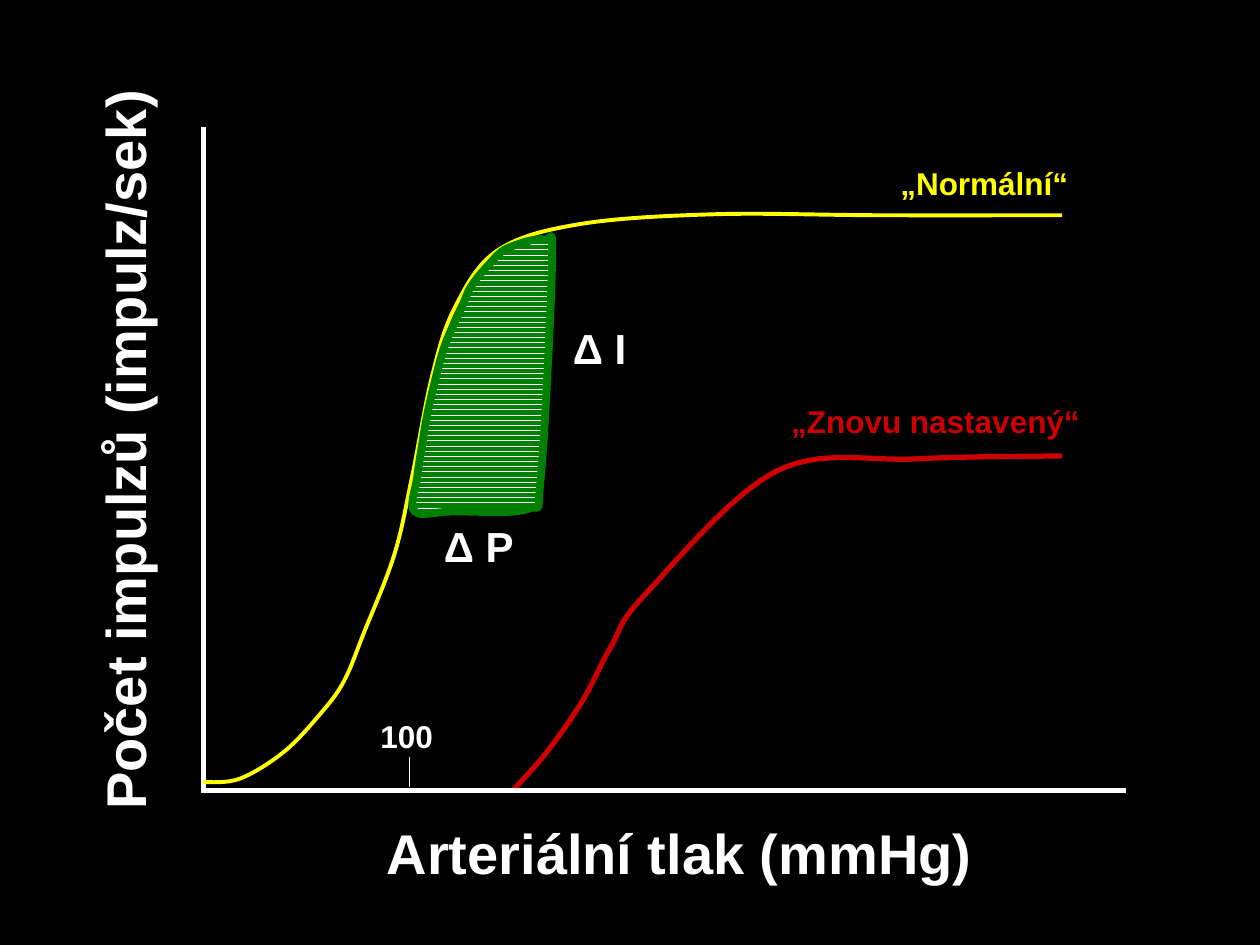
from pptx import Presentation
from pptx.dml.color import RGBColor
from pptx.enum.dml import MSO_PATTERN
from pptx.enum.shapes import MSO_CONNECTOR
from pptx.enum.text import MSO_AUTO_SIZE, PP_ALIGN
from pptx.oxml.ns import qn
from pptx.oxml.xmlchemy import OxmlElement
from pptx.util import Cm, Pt

BLACK, WHITE, YELLOW, RED, GREEN = "000000", "FFFFFF", "FFFF00", "CC0000", "008000"
AXIS_SIZE, DELTA_SIZE, LABEL_SIZE = 32, 24, 18
LABEL_HEIGHT, DELTA_WIDTH, DELTA_HEIGHT = 1.02, 2.4, 1.27
AXIS_X, AXIS_Y = 4.1, 15.93
AXIS_TOP, AXIS_BOTTOM, AXIS_RIGHT = 2.57, 15.98, 22.7
TICK_X, TICK_TOP, TICK_BOTTOM = 8.25, 15.26, 15.86
UNITS_PER_CM = 1000

NORMAL_KNOTS = [
    (4.09, 15.77), (4.83, 15.7), (5.72, 15.16), (6.45, 14.4), (6.93, 13.74),
    (7.34, 12.75), (7.95, 11.18), (8.31, 9.6), (8.71, 7.59), (9.17, 6.2),
    (10.03, 5.05), (11.68, 4.52), (14.4, 4.32), (17.73, 4.34), (21.41, 4.34),
]
RESET_KNOTS = [
    (10.34, 15.93), (11, 15.19), (11.73, 14.15), (12.32, 13.03),
    (13, 11.99), (15.65, 9.5), (18.47, 9.25), (21.41, 9.19),
]
DELTA_KNOTS = [
    (10.97, 4.83), (10.24, 5), (9.86, 5.33), (9.5, 5.77), (9.32, 6.17),
    (8.97, 6.96), (8.76, 7.72), (8.61, 8.38), (8.51, 8.97), (8.41, 9.63),
    (8.36, 10.31), (9.14, 10.31), (10.64, 10.26), (10.9, 9.65), (11.13, 5.26),
]


def color(value):
    """Turn a hex string into a colour."""
    return RGBColor.from_string(value)


def add_text(slide, text, left, top, width, height, *, size, fill=WHITE,
             align=PP_ALIGN.LEFT, rotation=0):
    """Add a bold one-line label."""
    shape = slide.shapes.add_textbox(Cm(left), Cm(top), Cm(width), Cm(height))
    shape.rotation = rotation
    frame = shape.text_frame
    frame.word_wrap = True
    frame.auto_size = MSO_AUTO_SIZE.SHAPE_TO_FIT_TEXT
    paragraph = frame.paragraphs[0]
    paragraph.alignment = align
    run = paragraph.add_run()
    run.text = text
    run.font.name = "Arial"
    run.font.size = Pt(size)
    run.font.bold = True
    run.font.color.rgb = color(fill)


def add_line(slide, start, end, weight):
    """Add a straight white line between two points."""
    line = slide.shapes.add_connector(
        MSO_CONNECTOR.STRAIGHT, *(Cm(value) for value in start + end))
    line.line.color.rgb = color(WHITE)
    line.line.width = Pt(weight)
    line._element.spPr.append(OxmlElement("a:effectLst"))


def smooth_points(knots, closed):
    """Return the start, then two controls and an end for each Catmull-Rom span."""
    if closed:
        padded = [knots[-1], *knots, *knots[:2]]
    else:
        padded = [knots[0], *knots, knots[-1]]
    points = [knots[0]]
    for before, start, end, after in zip(padded, padded[1:], padded[2:], padded[3:]):
        leaving = tuple(s + (e - b) / 6 for b, s, e in zip(before, start, end))
        arriving = tuple(e - (a - s) / 6 for s, e, a in zip(start, end, after))
        points += [leaving, arriving, end]
    return points


def turn_lines_into_beziers(shape):
    """Join each three line segments of a freeform into one cubic Bézier."""
    segments = list(shape._element.iter(qn("a:lnTo")))
    for index in range(0, len(segments), 3):
        bezier = OxmlElement("a:cubicBezTo")
        segments[index].addprevious(bezier)
        for segment in segments[index:index + 3]:
            bezier.append(segment[0])
            segment.getparent().remove(segment)


def add_curve(slide, knots, stroke, weight, closed=False):
    """Add a smooth unfilled curve through the knots."""
    start, *rest = [tuple(round(value * UNITS_PER_CM) for value in point)
                    for point in smooth_points(knots, closed)]
    builder = slide.shapes.build_freeform(*start, scale=Cm(1) / UNITS_PER_CM)
    builder.add_line_segments(rest, close=closed)
    shape = builder.convert_to_shape()
    turn_lines_into_beziers(shape)
    shape.shadow.inherit = False
    shape.fill.background()
    shape.line.color.rgb = color(stroke)
    shape.line.width = Pt(weight)
    return shape


def add_hatched_area(slide, knots):
    """Add a closed smooth area with horizontal hatching."""
    fill = add_curve(slide, knots, GREEN, 4.5, closed=True).fill
    fill.patterned()
    fill.pattern = MSO_PATTERN.DARK_HORIZONTAL
    fill.fore_color.rgb = color(GREEN)
    fill.back_color.rgb = color(WHITE)


def add_axes(slide):
    """Add both axes, their titles and the marked pressure."""
    add_line(slide, (AXIS_X, AXIS_TOP), (AXIS_X, AXIS_BOTTOM), 3)
    add_line(slide, (AXIS_X, AXIS_Y), (AXIS_RIGHT, AXIS_Y), 3)
    add_line(slide, (TICK_X, TICK_TOP), (TICK_X, TICK_BOTTOM), 0.75)
    add_text(slide, "100", 7.42, 14.33, 2, LABEL_HEIGHT, size=LABEL_SIZE)
    add_text(slide, "Arteriální tlak (mmHg)", 4.7, 16.38, 18, 1.6,
             size=AXIS_SIZE, align=PP_ALIGN.CENTER)
    add_text(slide, "Počet impulzů (impulz/sek)", -5.2, 8.26, 15.21, 1.42,
             size=AXIS_SIZE, rotation=270)


def main():
    """Build the slide with the normal and the reset response curve."""
    presentation = Presentation()
    presentation.slide_width, presentation.slide_height = Cm(25.4), Cm(19.05)
    slide = presentation.slides.add_slide(presentation.slide_layouts[6])
    background = slide.background.fill
    background.solid()
    background.fore_color.rgb = color(BLACK)

    add_curve(slide, RESET_KNOTS, RED, 3)
    add_axes(slide)
    add_curve(slide, NORMAL_KNOTS, YELLOW, 2.25)
    add_hatched_area(slide, DELTA_KNOTS)
    for text, left, top in [("Δ P", 8.7, 10.36), ("Δ I", 11.3, 6.38)]:
        add_text(slide, text, left, top, DELTA_WIDTH, DELTA_HEIGHT, size=DELTA_SIZE)
    for text, left, top, width, fill in [
        ("„Znovu nastavený“", 15.7, 7.98, 6.81, RED),
        ("„Normální“", 17.9, 3.18, 4.39, YELLOW),
    ]:
        add_text(slide, text, left, top, width, LABEL_HEIGHT, size=LABEL_SIZE, fill=fill)
    presentation.save("out.pptx")


if __name__ == "__main__":
    main()
